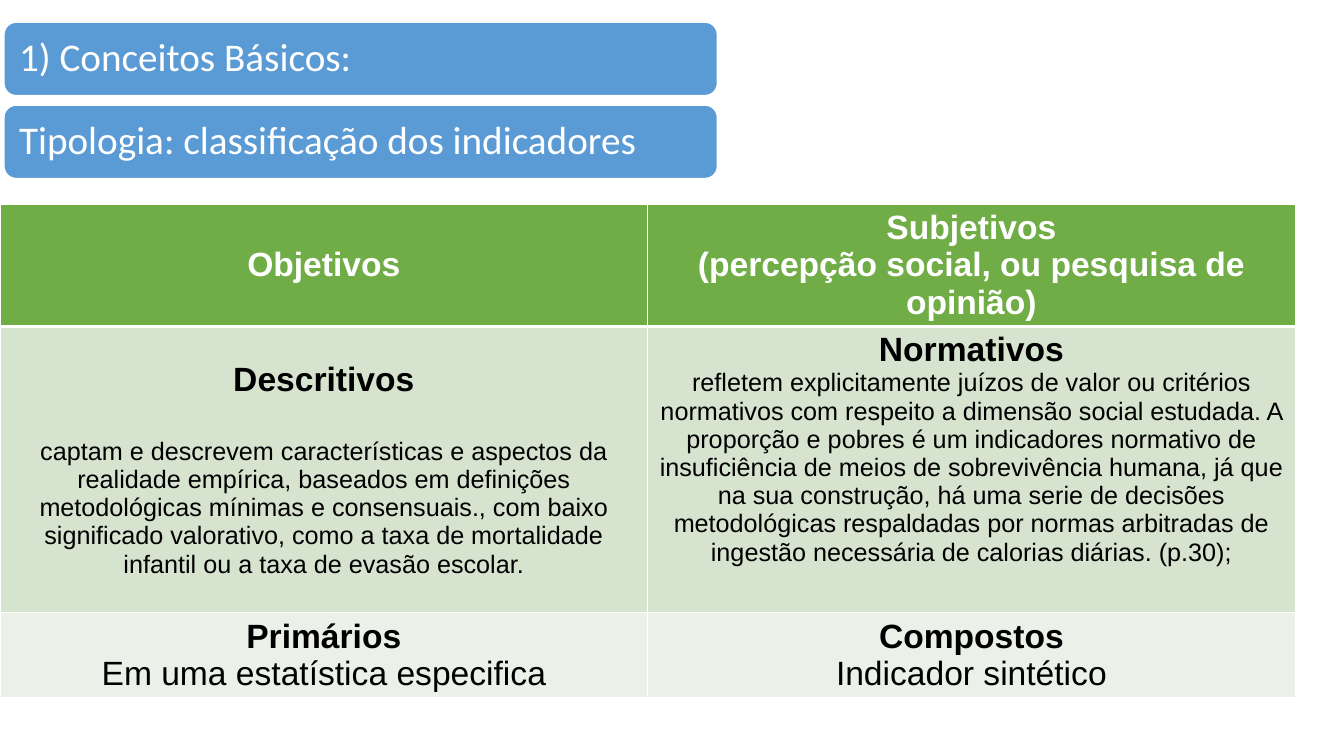
import pptx
import pptx.util
import pptx.dml.color
import pptx.enum.shapes
import pptx.enum.text
import pptx.oxml
import pptx.oxml.ns

Cm, Pt = pptx.util.Cm, pptx.util.Pt
RGBColor = pptx.dml.color.RGBColor
PP_ALIGN = pptx.enum.text.PP_ALIGN
ANCHOR = pptx.enum.text.MSO_ANCHOR

WHITE = RGBColor(0xFF, 0xFF, 0xFF)
BLACK = RGBColor(0, 0, 0)
BLUE = RGBColor(0x5B, 0x9B, 0xD5)
GREEN = RGBColor(0x70, 0xAD, 0x47)
GREEN_MID = RGBColor(0xD5, 0xE3, 0xCF)
GREEN_PALE = RGBColor(0xEB, 0xF1, 0xE9)

HEADINGS = ["1) Conceitos Básicos:", "Tipologia: classificação dos indicadores"]

# Each row: height in cm, fill, text colour, cells; each cell: (text, size, bold)
ROWS = [
    (3.07, GREEN, WHITE, [
        [("Objetivos", 24, True)],
        [("Subjetivos", 24, True),
         ("(percepção social, ou pesquisa de opinião)", 24, True)],
    ]),
    (7.21, GREEN_MID, BLACK, [
        [("Descritivos", 24, True),
         ("captam e descrevem características e aspectos da realidade empírica, "
          "baseados em definições metodológicas mínimas e consensuais., com baixo "
          "significado valorativo, como a taxa de mortalidade infantil ou a taxa "
          "de evasão escolar.", 18, False)],
        [("Normativos", 24, True),
         ("refletem explicitamente juízos de valor ou critérios normativos com "
          "respeito a dimensão social estudada. A proporção e pobres é um "
          "indicadores normativo de insuficiência de meios de sobrevivência humana, "
          "já que na sua construção, há uma serie de decisões metodológicas "
          "respaldadas por normas arbitradas de ingestão necessária de calorias "
          "diárias. (p.30);", 18, False)],
    ]),
    (2.13, GREEN_PALE, BLACK, [
        [("Primários", 24, True), ("Em uma estatística especifica", 24, False)],
        [("Compostos", 24, True), ("Indicador sintético", 24, False)],
    ]),
]


def set_attributes(target, values):
    for name, value in values.items():
        setattr(target, name, value)


def write_paragraph(p, text, size, font, color, bold, align):
    p.alignment = align
    r = p.add_run()
    r.text = text
    set_attributes(r.font, {"name": font, "size": Pt(size), "bold": bold})
    r.font.color.rgb = color


def add_heading_bar(s, placeholder, text, top):
    bar = s.shapes.add_shape(pptx.enum.shapes.MSO_SHAPE.ROUNDED_RECTANGLE,
                             Cm(0.1), Cm(top), Cm(17.98), Cm(1.85))
    bar.shadow.inherit = False
    bar.fill.solid()
    bar.fill.fore_color.rgb = BLUE
    bar.line.color.rgb = WHITE
    bar.line.width = Pt(1)

    # Bring the placeholder in front of its bar
    bar.element.addnext(placeholder.element)
    set_attributes(placeholder, {"left": Cm(0.18), "top": Cm(top + 0.09),
                                 "width": Cm(17.81), "height": Cm(1.67)})
    tf = placeholder.text_frame
    margins = dict.fromkeys(
        ["margin_left", "margin_right", "margin_top", "margin_bottom"], Cm(0.3))
    set_attributes(tf, {"word_wrap": True, "vertical_anchor": ANCHOR.MIDDLE,
                        "auto_size": pptx.enum.text.MSO_AUTO_SIZE.NONE, **margins})
    p = tf.paragraphs[0]
    set_attributes(p, {"line_spacing": 0.9, "space_before": Pt(0)})
    write_paragraph(p, text, 28, "Calibri", WHITE, False, PP_ALIGN.LEFT)


def set_borders(cell, widths):
    for side, width in widths.items():
        cell._tc.get_or_add_tcPr().append(pptx.oxml.parse_xml(
            f'<a:ln{side} {pptx.oxml.ns.nsdecls("a")} w="{Pt(width)}"><a:solidFill>'
            f'<a:srgbClr val="{WHITE}"/></a:solidFill></a:ln{side}>'))


def fill_cell(cell, lines, fill, color):
    cell.vertical_anchor = ANCHOR.MIDDLE
    tf = cell.text_frame
    for i, (text, size, bold) in enumerate(lines):
        p = tf.add_paragraph() if i else tf.paragraphs[0]
        write_paragraph(p, text, size, "Arial", color, bold, PP_ALIGN.CENTER)
    cell.fill.solid()
    cell.fill.fore_color.rgb = fill


def add_indicator_table(s):
    height = sum(row[0] for row in ROWS)
    table = s.shapes.add_table(len(ROWS), 2, Cm(0), Cm(5.14),
                               Cm(32.64), Cm(height)).table
    for i, (row_height, fill, color, cells) in enumerate(ROWS):
        table.rows[i].height = Cm(row_height)
        for j, lines in enumerate(cells):
            cell = table.cell(i, j)
            # A thicker rule separates the header from the body
            set_borders(cell, {"L": 1, "R": 1, "T": 3 if i == 1 else 1,
                               "B": 3 if i == 0 else 1})
            fill_cell(cell, lines, fill, color)

    # The descriptive text sits apart from its heading; the normative one is at the top
    table.cell(1, 0).text_frame.paragraphs[1].space_before = Pt(28)
    table.cell(1, 1).vertical_anchor = ANCHOR.TOP


def main():
    prs = pptx.Presentation()
    set_attributes(prs, {"slide_width": Cm(33.87), "slide_height": Cm(19.05)})
    s = prs.slides.add_slide(prs.slide_layouts[0])

    # Title and subtitle bars
    for i, (placeholder, text) in enumerate(zip(list(s.placeholders), HEADINGS)):
        add_heading_bar(s, placeholder, text, 0.56 + 2.09 * i)

    # Classification of indicators
    add_indicator_table(s)
    prs.save("out.pptx")


if __name__ == "__main__":
    main()
